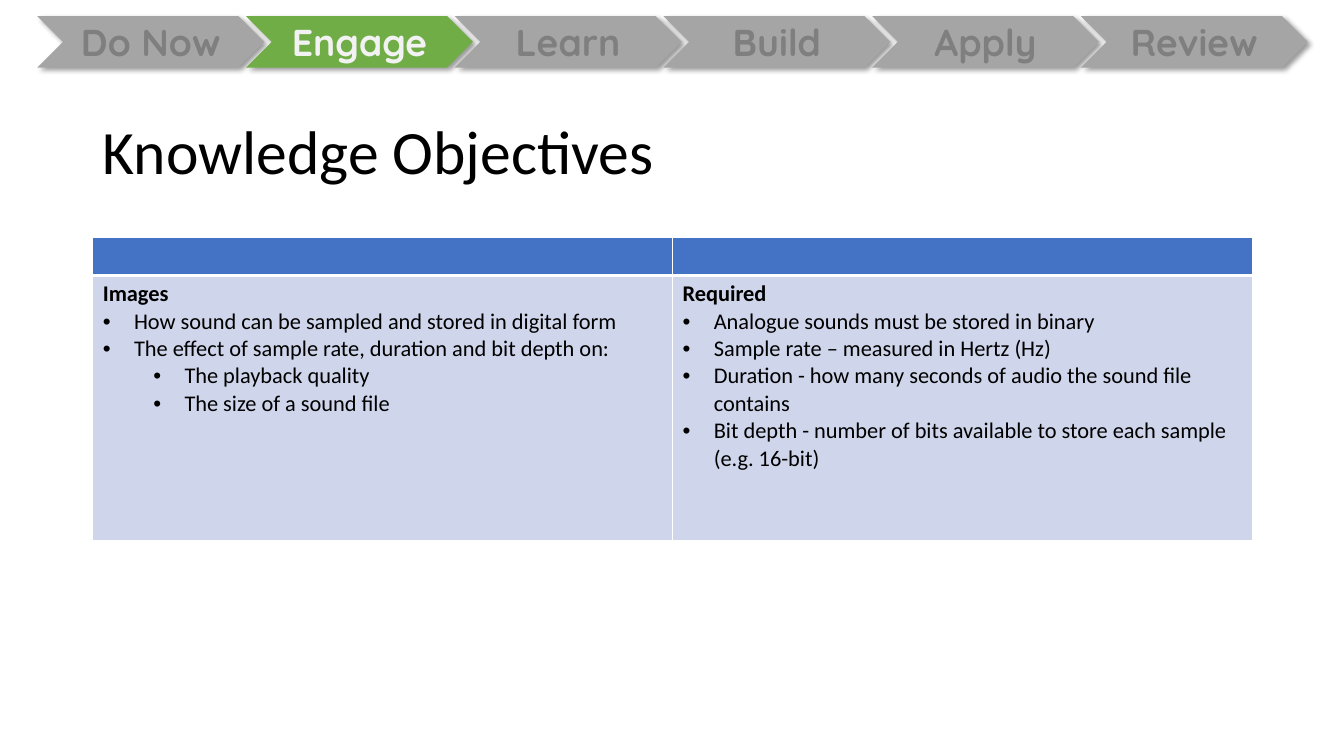
from dataclasses import dataclass

from lxml.etree import SubElement
from pptx import Presentation
from pptx.dml.color import RGBColor
from pptx.enum.shapes import MSO_SHAPE as Shape
from pptx.enum.text import MSO_ANCHOR as Anchor, PP_ALIGN as Align
from pptx.oxml import parse_xml
from pptx.oxml.ns import nsdecls, qn
from pptx.util import Inches, Pt


@dataclass(frozen=True)
class Theme:
    body_font: str = "Calibri"
    stage_font: str = "Quicksand"
    title_size: float = 44
    stage_size: float = 26.7
    table_size: float = 16
    text: str = "000000"
    stage: str = "A5A5A5"
    stage_text: str = "7F7F7F"
    active: str = "70AD47"
    active_text: str = "F2F2F2"
    header: str = "4472C4"
    body: str = "CFD5EA"
    border: str = "FFFFFF"


THEME = Theme()
STAGES = ["Do Now", "Engage", "Learn", "Build", "Apply", "Review"]
ACTIVE_STAGE = "Engage"
# Each column: heading, then (indent level, bullet text)
COLUMNS = [
    ("Images", [
        (0, "How sound can be sampled and stored in digital form"),
        (0, "The effect of sample rate, duration and bit depth on:"),
        (1, "The playback quality"),
        (1, "The size of a sound file"),
    ]),
    ("Required", [
        (0, "Analogue sounds must be stored in binary"),
        (0, "Sample rate – measured in Hertz (Hz)"),
        (0, "Duration - how many seconds of audio the sound file contains"),
        (0, "Bit depth - number of bits available to store each sample (e.g. 16-bit)"),
    ]),
]


def add_run(p, text, font, size, color, bold=False):
    r = p.add_run()
    r.text = text
    r.font.name = font
    r.font.size = Pt(size)
    r.font.bold = bold
    r.font.color.rgb = RGBColor.from_string(color)


def add_shadow(shape):
    shape.shadow.inherit = False
    effects = shape._element.spPr.find(qn("a:effectLst"))
    effects.append(parse_xml(
        f'<a:outerShdw {nsdecls("a")} blurRad="{Pt(4)}" dist="{Pt(3)}" '
        f'dir="{45 * 60000}" algn="tl" rotWithShape="0">'
        '<a:srgbClr val="000000"><a:alpha val="40000"/></a:srgbClr></a:outerShdw>'))


def add_stage_bar(s, left, top, width, height, overlap=0.18):
    """Fill the box with equal chevrons, each overlapping the one before."""
    count = len(STAGES)
    stage_width = (width + overlap * (count - 1)) / count
    for i, name in enumerate(STAGES):
        active = name == ACTIVE_STAGE
        sp = s.shapes.add_shape(
            Shape.CHEVRON, Inches(left + i * (stage_width - overlap)),
            Inches(top), Inches(stage_width), Inches(height))
        sp.fill.solid()
        sp.fill.fore_color.rgb = RGBColor.from_string(
            THEME.active if active else THEME.stage)
        sp.line.fill.background()
        add_shadow(sp)
        tf = sp.text_frame
        tf.word_wrap = True
        tf.vertical_anchor = Anchor.MIDDLE
        p = tf.paragraphs[0]
        p.alignment = Align.CENTER
        add_run(p, name, THEME.stage_font, THEME.stage_size,
                THEME.active_text if active else THEME.stage_text, bold=True)


def add_title(s, text, left, top, width, height):
    title = s.shapes.title
    title.left, title.top = Inches(left), Inches(top)
    title.width, title.height = Inches(width), Inches(height)
    tf = title.text_frame
    tf.word_wrap = True
    tf.vertical_anchor = Anchor.MIDDLE
    p = tf.paragraphs[0]
    p.alignment = Align.LEFT
    p.line_spacing = 0.9
    add_run(p, text, THEME.body_font, THEME.title_size, THEME.text)


def style_cell(cell, fill, top=1, bottom=1):
    """Set the fill and the border widths, in points."""
    cell.fill.solid()
    cell.fill.fore_color.rgb = RGBColor.from_string(fill)
    tc_pr = cell._tc.get_or_add_tcPr()
    sides = {"lnL": 1, "lnR": 1, "lnT": top, "lnB": bottom}
    for i, (side, width) in enumerate(sides.items()):
        tc_pr.insert(i, parse_xml(
            f'<a:{side} {nsdecls("a")} w="{Pt(width)}"><a:solidFill>'
            f'<a:srgbClr val="{THEME.border}"/></a:solidFill></a:{side}>'))


def set_bullet(p, level):
    p.level = level
    p_pr = p._p.get_or_add_pPr()
    p_pr.set("marL", str(Inches(0.31 + 0.5 * level)))
    p_pr.set("indent", str(Inches(-0.31)))
    SubElement(p_pr, qn("a:buFont"), typeface="Arial")
    SubElement(p_pr, qn("a:buChar"), char="•")


def add_objectives(s, left, top, width, height, header_height=0.36):
    table = s.shapes.add_table(2, len(COLUMNS), Inches(left), Inches(top),
                               Inches(width), Inches(height)).table
    table.rows[0].height = Inches(header_height)
    table.rows[1].height = Inches(height - header_height)
    for col, (heading, bullets) in enumerate(COLUMNS):
        table.columns[col].width = Inches(width / len(COLUMNS))

        header = table.cell(0, col)
        style_cell(header, THEME.header, bottom=3)
        SubElement(header.text_frame.paragraphs[0]._p, qn("a:endParaRPr"),
                   sz=str(THEME.table_size * 100))

        body = table.cell(1, col)
        style_cell(body, THEME.body, top=3)
        tf = body.text_frame
        add_run(tf.paragraphs[0], heading, THEME.body_font, THEME.table_size,
                THEME.text, bold=True)
        for level, text in bullets:
            p = tf.add_paragraph()
            set_bullet(p, level)
            add_run(p, text, THEME.body_font, THEME.table_size, THEME.text)


def main():
    prs = Presentation()
    prs.slide_width, prs.slide_height = Inches(13.33), Inches(7.5)
    s = prs.slides.add_slide(prs.slide_layouts[5])
    add_stage_bar(s, 0.37, 0.16, 12.6, 0.51)
    add_title(s, "Knowledge Objectives", 0.92, 0.81, 11.5, 1.45)
    add_objectives(s, 0.92, 2.36, 11.5, 2.99)
    prs.save("out.pptx")


if __name__ == "__main__":
    main()
